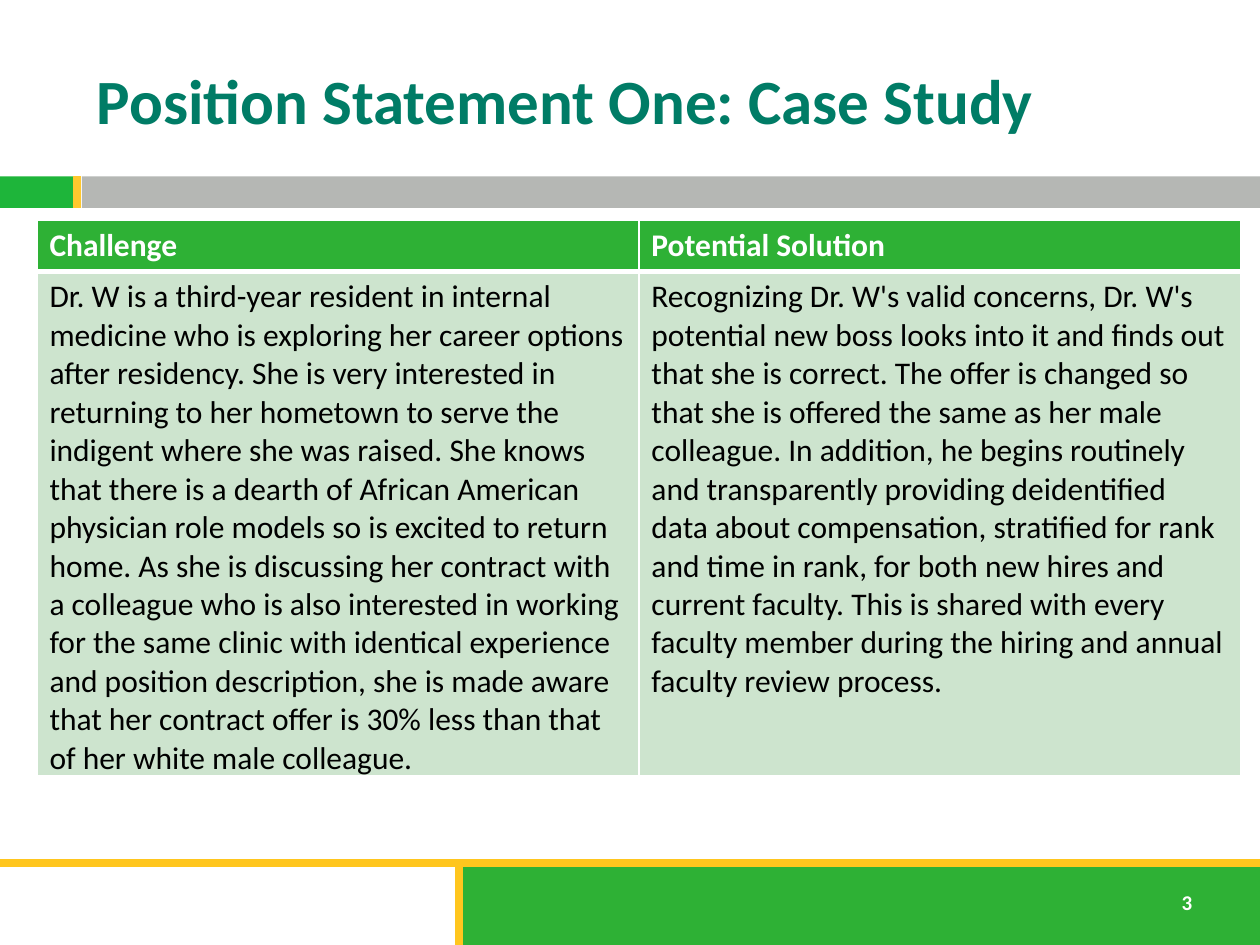
from lxml import etree
from pptx import Presentation, util as u
from pptx.dml.color import RGBColor
from pptx.enum import shapes, text
from pptx.oxml.ns import qn

Pt = u.Pt
FONT = "Calibri"
HUES = {"white": "FFFFFF", "black": "000000", "teal": "007C66", "mint": "CDE4CE",
        "leaf": "1EB53A", "green": "2EB135", "gray": "B5B7B4",
        "gold": "FFC61E", "amber": "FFC82E"}

TITLE = "Position Statement One: Case Study"
PAGE = "3"
ROWS = [
    ("Challenge", "Potential Solution"),
    ("Dr. W is a third-year resident in internal medicine who is exploring her "
     "career options after residency. She is very interested in returning to her "
     "hometown to serve the indigent where she was raised. She knows that there is "
     "a dearth of African American physician role models so is excited to return "
     "home. As she is discussing her contract with a colleague who is also "
     "interested in working for the same clinic with identical experience and "
     "position description, she is made aware that her contract offer is 30% less "
     "than that of her white male colleague.",
     "Recognizing Dr. W's valid concerns, Dr. W's potential new boss looks into it "
     "and finds out that she is correct. The offer is changed so that she is "
     "offered the same as her male colleague. In addition, he begins routinely and "
     "transparently providing deidentified data about compensation, stratified for "
     "rank and time in rank, for both new hires and current faculty. This is shared "
     "with every faculty member during the hiring and annual faculty review "
     "process."),
]
STYLES = [("green", "white", True, 29.2), ("mint", "black", False, 288.3)]
BARS = [
    (0, 97.2, 720, 25.2, "white"),
    (0, 100.8, 42, 18, "leaf"),
    (46.8, 100.8, 673.2, 18, "gray"),
    (0, 490.3, 720, 47.5, "white"),
    (260.6, 492.5, 459.4, 47.5, "green"),
]
RULES = [
    (0, 493.2, 720, 493.2, "gold"),
    (262.1, 493.9, 262.1, 540, "gold"),
    (43.9, 100.8, 43.9, 118.8, "amber"),
]


def hue(name):
    return RGBColor.from_string(HUES[name])


def paint(shape, name):
    shape.fill.solid()
    shape.fill.fore_color.rgb = hue(name)


def write(frame, words, size, name, bold):
    para = frame.paragraphs[0]
    para.text = words
    font = para.font
    font.name, font.size, font.bold = FONT, Pt(size), bold
    font.color.rgb = hue(name)
    return para


def label(box, words, size, name, wrap):
    area = slide.shapes.add_textbox(*map(Pt, box))
    frame = area.text_frame
    frame.word_wrap = wrap
    frame.vertical_anchor = text.MSO_ANCHOR.MIDDLE
    write(frame, words, size, name, True)
    return frame


def edge(cell, sides):
    props = cell._tc.get_or_add_tcPr()
    for spot, (side, width) in enumerate(sides):
        line = etree.Element(qn("a:" + side), w=str(Pt(width)))
        fill = etree.SubElement(line, qn("a:solidFill"))
        etree.SubElement(fill, qn("a:srgbClr"), val=HUES["white"])
        props.insert(spot, line)


deck = Presentation()
deck.slide_width, deck.slide_height = Pt(720), Pt(540)
slide = deck.slides.add_slide(deck.slide_layouts[6])

for *box, name in BARS:
    bar = slide.shapes.add_shape(shapes.MSO_SHAPE.RECTANGLE, *map(Pt, box))
    bar.shadow.inherit = False
    bar.line.fill.background()
    paint(bar, name)

for *ends, name in RULES:
    rule = slide.shapes.add_connector(shapes.MSO_CONNECTOR.STRAIGHT, *map(Pt, ends))
    rule.line.width = Pt(4.5)
    rule.line.color.rgb = hue(name)
    etree.SubElement(rule._element.spPr, qn("a:effectLst"))

page = label((668.2, 504.7, 28.8, 21.6), PAGE, 12, "white", False)
page.auto_size = text.MSO_AUTO_SIZE.SHAPE_TO_FIT_TEXT
label((48.2, 18, 642.2, 77.8), TITLE, 36, "teal", True)

high = sum(style[-1] for style in STYLES)
grid = slide.shapes.add_table(len(ROWS), 2, Pt(21.1), Pt(126), Pt(688), Pt(high)).table
for r, (fill, ink, bold, tall) in enumerate(STYLES):
    grid.rows[r].height = Pt(tall)
    top, base = (1, 3) if r == 0 else (3, 1)
    for c, words in enumerate(ROWS[r]):
        cell = grid.cell(r, c)
        paint(cell, fill)
        write(cell.text_frame, words, 18, ink, bold)
        edge(cell, [("lnL", 1), ("lnR", 1), ("lnT", top), ("lnB", base)])

deck.save("out.pptx")
